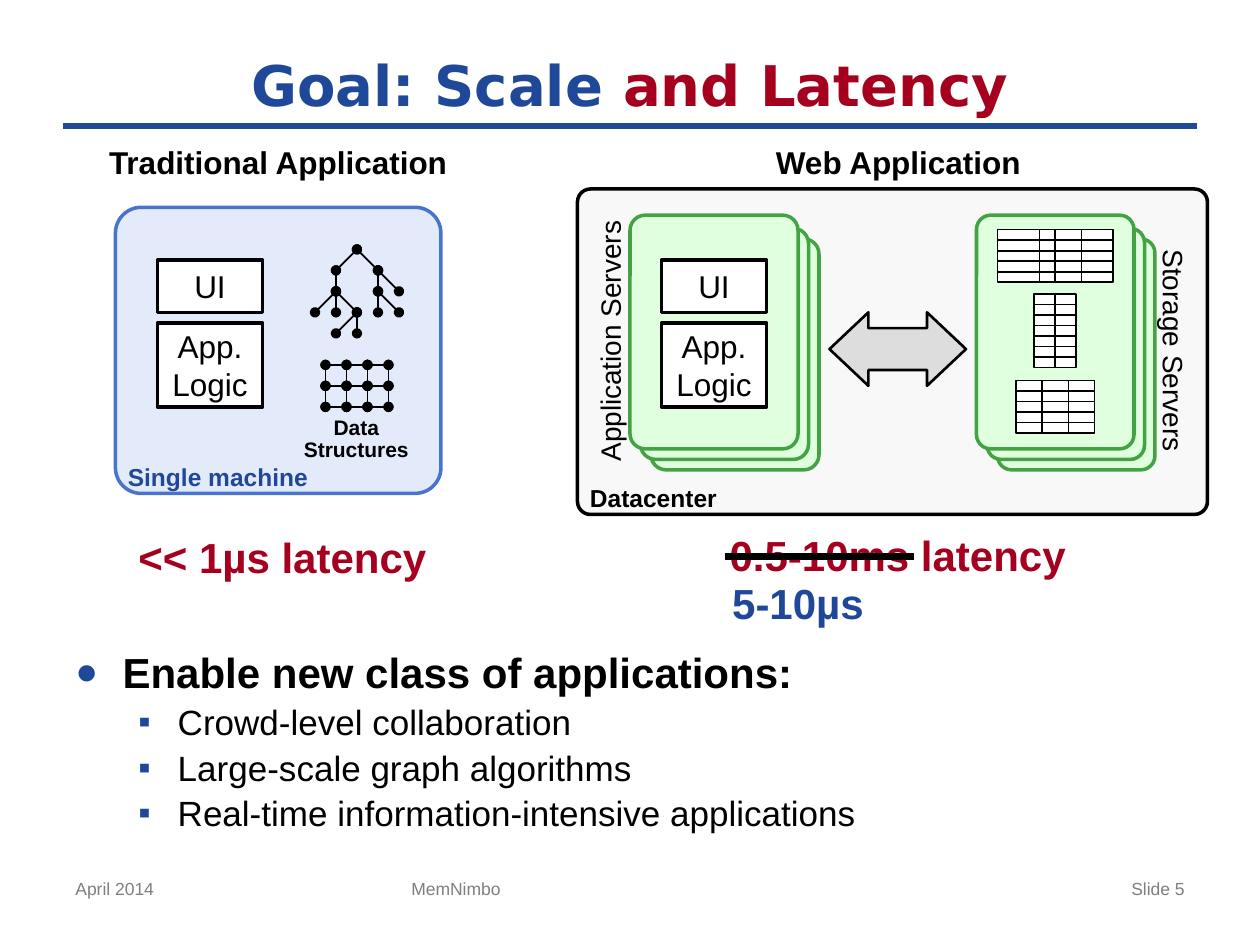
from lxml.etree import SubElement
from pptx import Presentation
from pptx.dml.color import RGBColor
from pptx.enum.shapes import MSO_CONNECTOR, MSO_SHAPE
from pptx.enum.text import MSO_ANCHOR, PP_ALIGN
from pptx.oxml.ns import qn
from pptx.util import Pt

PX = 9525
BLUE, RED, BLACK, WHITE, GRAY = "1F4899", "A5001E", "000000", "FFFFFF", "7F7F7F"
LEFT, CENTER, RIGHT = PP_ALIGN.LEFT, PP_ALIGN.CENTER, PP_ALIGN.RIGHT


def px(*lengths):
    return [round(length * PX) for length in lengths]


def rgb(value):
    return RGBColor.from_string(value)


def set_all(target, formats):
    for name, value in formats.items():
        setattr(target, name, value)


def style_run(run, size, color=BLACK, bold=False, font="Arial"):
    set_all(run.font, {"name": font, "size": Pt(size), "bold": bold})
    run.font.color.rgb = rgb(color)


def write(frame, text, size, color=BLACK, bold=False, align=LEFT, spacing=None, **frame_formats):
    frame.text = text
    set_all(frame, {"word_wrap": True, **frame_formats})
    for paragraph in frame.paragraphs:
        set_all(paragraph, {"alignment": align, "line_spacing": spacing})
        style_run(paragraph.runs[0], size, color, bold)


def label(slide, box, text, size, rotation=0, **formats):
    textbox = slide.shapes.add_textbox(*px(*box))
    textbox.rotation = rotation
    write(textbox.text_frame, text, size, **formats)


def panel(slide, kind, box, fill, line, width, adjustments=()):
    shape = slide.shapes.add_shape(kind, *px(*box))
    shape.shadow.inherit = False
    shape.fill.solid()
    shape.fill.fore_color.rgb = rgb(fill)
    shape.line.color.rgb = rgb(line)
    shape.line.width = Pt(width)
    for index, value in enumerate(adjustments):
        shape.adjustments[index] = value
    return shape


def rule(slide, start, end, color=BLACK, width=1, dots=False):
    line = slide.shapes.add_connector(MSO_CONNECTOR.STRAIGHT, *px(*start, *end))
    line.line.color.rgb = rgb(color)
    line.line.width = Pt(width)
    properties = line._element.spPr
    if dots:
        for tag in ("a:headEnd", "a:tailEnd"):
            SubElement(properties.find(qn("a:ln")), qn(tag), type="oval")
    SubElement(properties, qn("a:effectLst"))
    return line


def heading(slide, x, y, width, height):
    title = slide.shapes.title
    set_all(title, dict(zip(("left", "top", "width", "height"), px(x, y, width, height))))
    title.text_frame.vertical_anchor = MSO_ANCHOR.MIDDLE
    paragraph = title.text_frame.paragraphs[0]
    paragraph.alignment = CENTER
    for text, color in (("Goal: Scale ", BLUE), ("and Latency", RED)):
        run = paragraph.add_run()
        run.text = text
        style_run(run, 32, color, True, "DejaVu Sans")
    rule(slide, (x, y + height), (x + width, y + height), BLUE, 4)


def software_stack(slide, x, y):
    for text, top, height in (("UI", 0, 40), ("App.\nLogic", 48, 64)):
        block = panel(slide, MSO_SHAPE.RECTANGLE, (x, y + top, 80, height), WHITE, BLACK, 2)
        write(block.text_frame, text, 18, align=CENTER, word_wrap=False,
              vertical_anchor=MSO_ANCHOR.MIDDLE)


def linked_nodes(slide, x, y, edges, step=16):
    """Draw edges between nodes given as (column, row)."""
    for ends in edges:
        start, end = ((x + column * step, y + row * step) for column, row in ends)
        rule(slide, start, end, dots=True)


def data_structures(slide, x, y):
    children = {(2, 0): [(1, 1), (3, 1)], (1, 1): [(1, 2)], (3, 1): [(3, 2), (4, 2)],
                (1, 2): [(0, 3), (1, 3), (2, 3)], (3, 2): [(3, 3), (4, 3)],
                (2, 3): [(1, 4), (2, 4)]}
    linked_nodes(slide, x, y, [(parent, child) for parent in children
                               for child in children[parent]])
    across = [((c, r), (c + 1, r)) for r in range(3) for c in range(3)]
    down = [((c, r), (c, r + 1)) for r in range(2) for c in range(4)]
    linked_nodes(slide, x + 8, y + 88, across + down)
    label(slide, (x - 18, y + 123, 99, 44), "Data\nStructures", 12, bold=True,
          align=CENTER, spacing=0.9, word_wrap=False)


def corner_label(slide, x, y, width, text, color):
    label(slide, (x, y, width, 23), text, 14, color=color, bold=True, word_wrap=False,
          margin_top=0, margin_bottom=0)


def single_machine(slide, x, y, width, height):
    panel(slide, MSO_SHAPE.ROUNDED_RECTANGLE, (x, y, width, height), "E3EAF9", "4974CB", 2, [0.09])
    software_stack(slide, x + 32, y + 40)
    data_structures(slide, x + 152, y + 32)
    corner_label(slide, x, y + height - 24, 157, "Single machine", BLUE)


def server_stack(slide, x, y, width):
    for right, down, height in ((16, 18, 176), (8, 10, 176), (0, 0, 178)):
        panel(slide, MSO_SHAPE.ROUNDED_RECTANGLE, (x + right, y + down, width, height),
              "DFFFDF", "43A343", 2, [0.09])


def stored_table(slide, x, y, width, height, columns, row_height=8):
    frame = panel(slide, MSO_SHAPE.RECTANGLE, (x, y, width, height), WHITE, BLACK, 1)
    for column in columns:
        divider = rule(slide, (x + column, y), (x + column, y + height))
        if column * 2 == width:
            divider.begin_connect(frame, 0)
            divider.end_connect(frame, 2)
    for row in range(row_height, height, row_height):
        rule(slide, (x, y + row), (x + width, y + row))


def datacenter(slide, x, y, width, height):
    panel(slide, MSO_SHAPE.ROUNDED_RECTANGLE, (x, y, width, height), "F8F8F8", BLACK, 2, [0.04])
    server_stack(slide, x + 40, y + 20, 128)
    software_stack(slide, x + 64, y + 54)
    server_stack(slide, x + 304, y + 20, 120)
    stored_table(slide, x + 320, y + 31, 88, 40, (32, 44, 64))
    stored_table(slide, x + 348, y + 80, 32, 56, (16,))
    stored_table(slide, x + 334, y + 146, 60, 40, (20, 40))
    label(slide, (x - 83, y + 98, 216, 36), "Application Servers", 16, rotation=270, align=CENTER)
    label(slide, (x + 354, y + 105, 200, 36), "Storage Servers", 16, rotation=90, align=CENTER)
    panel(slide, MSO_SHAPE.LEFT_RIGHT_ARROW, (x + 192, y + 94, 104, 56),
          "DDDDDD", BLACK, 1.5, [0.57, 0.53])
    corner_label(slide, x, y + height - 24, 116, "Datacenter", BLACK)


def latencies(slide, y):
    label(slide, (96, y + 1, 239, 48), "<< 1µs latency", 24, color=RED, bold=True, word_wrap=False)
    label(slide, (544, y, 280, 48), "0.5-10ms latency", 24, color=RED, bold=True, align=CENTER)
    label(slide, (557, y + 41, 102, 38), "5-10µs", 24, color=BLUE, bold=True, align=CENTER,
          word_wrap=False, margin_left=0, margin_right=0, margin_top=0, margin_bottom=0)
    rule(slide, (552, y + 25), (696, y + 25), width=4)


def add_bullet(paragraph, symbol, size, margin, hanging):
    properties = paragraph._p.get_or_add_pPr()
    properties.set("marL", str(margin * PX))
    properties.set("indent", str(-hanging * PX))
    SubElement(SubElement(properties, qn("a:buClr")), qn("a:srgbClr"), val=BLUE)
    SubElement(properties, qn("a:buSzPct"), val=str(size * 1000))
    SubElement(properties, qn("a:buFont"), typeface="Arial")
    SubElement(properties, qn("a:buChar"), char=symbol)


def outcomes(slide, *box):
    frame = slide.shapes.add_textbox(*px(*box)).text_frame
    write(frame, "Enable new class of applications:\nCrowd-level collaboration\n"
          "Large-scale graph algorithms\nReal-time information-intensive applications", 20)
    lead, *examples = frame.paragraphs
    style_run(lead.runs[0], 24, bold=True)
    lead.space_before = Pt(6)
    add_bullet(lead, "●", 90, 36, 36)
    for example in examples:
        set_all(example, {"level": 1, "space_before": Pt(2)})
        add_bullet(example, "▪", 100, 78, 30)


def footer(slide, y):
    for x, width, text, align in ((48, 224, "April 2014", LEFT), (304, 360, "MemNimbo", LEFT),
                                  (688, 224, "Slide 5", RIGHT)):
        label(slide, (x, y, width, 41), text, 10, color=GRAY, align=align)


def main():
    deck = Presentation()
    deck.slide_width, deck.slide_height = px(960, 720)
    slide = deck.slides.add_slide(deck.slide_layouts[5])
    heading(slide, 48, 32, 864, 64)
    for x, width, text in ((72, 280, "Traditional Application"), (553, 263, "Web Application")):
        label(slide, (x, 104, width, 38), text, 18, bold=True, align=CENTER)
    single_machine(slide, 88, 158, 248, 218)
    datacenter(slide, 440, 144, 480, 248)
    latencies(slide, 399)
    outcomes(slide, 48, 488, 864, 209)
    footer(slide, 664)
    deck.save("out.pptx")


if __name__ == "__main__":
    main()
